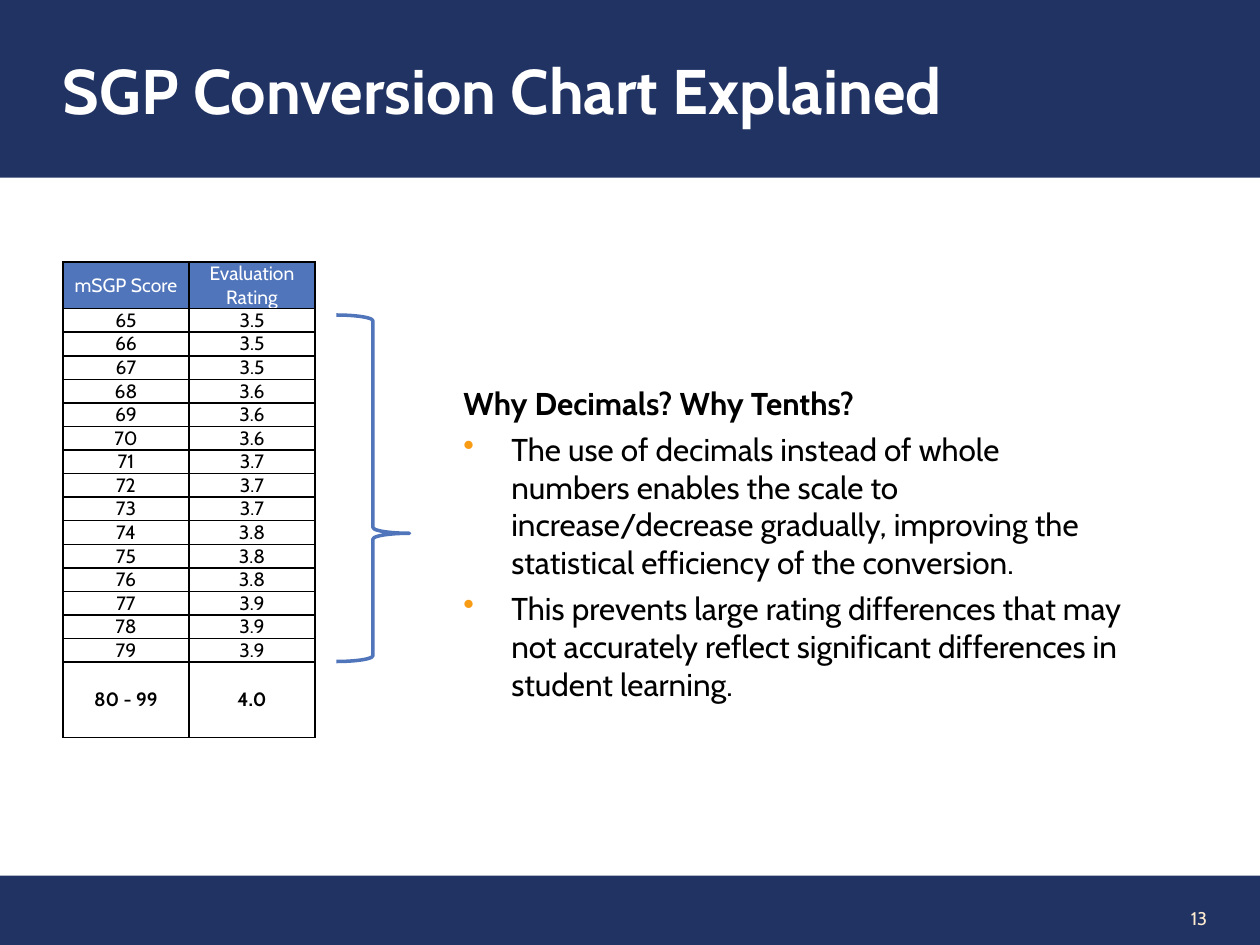
from lxml import etree
from pptx import Presentation
from pptx.dml.color import RGBColor
from pptx.enum.shapes import MSO_SHAPE
from pptx.enum.text import MSO_ANCHOR, PP_ALIGN
from pptx.oxml.ns import qn
from pptx.util import Inches, Pt

RECTANGLE, RIGHT_BRACE = MSO_SHAPE.RECTANGLE, MSO_SHAPE.RIGHT_BRACE
TOP, MIDDLE = MSO_ANCHOR.TOP, MSO_ANCHOR.MIDDLE
LEFT, CENTER, RIGHT = PP_ALIGN.LEFT, PP_ALIGN.CENTER, PP_ALIGN.RIGHT

NAVY = RGBColor(0x21, 0x33, 0x63)
BLUE = RGBColor(0x50, 0x75, 0xBB)
ORANGE = RGBColor(0xF8, 0x9C, 0x15)
CREAM = RGBColor(0xFE, 0xEB, 0xD0)
WHITE = RGBColor(0xFF, 0xFF, 0xFF)
BLACK = RGBColor(0, 0, 0)

COLUMNS, ROWS = 10, 7.5
FIRST_SCORE, LAST_SCORE = 65, 79
SCORES = range(FIRST_SCORE, LAST_SCORE + 1)
RATINGS = [
    ("mSGP Score", "Evaluation Rating"),
    *((str(score), f"{3.5 + (score - FIRST_SCORE) // 3 / 10:.1f}") for score in SCORES),
    ("80 - 99", "4.0"),
]
ROW_HEIGHTS = [0.37] + [2.81 / len(SCORES)] * len(SCORES) + [0.6]
REASONS = [
    "The use of decimals instead of whole numbers enables the scale to "
    "increase/decrease gradually, improving the statistical efficiency of the conversion.",
    "This prevents large rating differences that may not accurately reflect "
    "significant differences in student learning.",
]


class SlideBuilder:
    """Draws styled elements on a slide divided into one-inch columns and rows."""

    font = "Cabin"

    def __init__(self, slide):
        self.slide = slide

    def place(self, *lengths):
        return [Inches(length) for length in lengths]

    def style_text(self, paragraph, size, color, bold=False, align=LEFT):
        paragraph.alignment = align
        for run in paragraph.runs:
            run.font.name = self.font
            run.font.size = Pt(size)
            run.font.bold = bold
            run.font.color.rgb = color

    def band(self, top, height):
        band = self.slide.shapes.add_shape(RECTANGLE, *self.place(0, top, COLUMNS, height))
        band.shadow.inherit = False
        band.fill.solid()
        band.fill.fore_color.rgb = NAVY
        band.line.fill.background()
        return band

    def title_band(self, title, height):
        frame = self.band(0, height).text_frame
        frame.text = title
        frame.word_wrap = True
        frame.vertical_anchor = MIDDLE
        frame.margin_left = Inches(0.5)
        self.style_text(frame.paragraphs[0], 36, WHITE, bold=True)

    def text_box(self, area, lines, size, color, bold=False, align=LEFT, anchor=TOP):
        frame = self.slide.shapes.add_textbox(*self.place(*area)).text_frame
        frame.word_wrap = True
        frame.vertical_anchor = anchor
        frame.text = "\n".join(lines)
        self.style_text(frame.paragraphs[0], size, color, bold, align)
        return frame

    def bullet(self, paragraph, size):
        properties = paragraph._p.get_or_add_pPr()
        indent = Inches(0.38)
        properties.set("marL", str(indent))
        properties.set("indent", str(-indent))
        bullet_color = etree.SubElement(properties, qn("a:buClr"))
        etree.SubElement(bullet_color, qn("a:srgbClr"), val=str(ORANGE))
        etree.SubElement(properties, qn("a:buChar"), char="•")
        paragraph.space_before = Pt(4.5)
        self.style_text(paragraph, size, BLACK)

    def explanation(self, area, heading, reasons):
        frame = self.text_box(area, [heading, *reasons], 18, BLACK, bold=True)
        for paragraph in frame.paragraphs[1:]:
            self.bullet(paragraph, 18)

    def border(self, cell):
        properties = cell._tc.get_or_add_tcPr()
        for side in ("a:lnL", "a:lnR", "a:lnT", "a:lnB"):
            line = etree.SubElement(properties, qn(side), w=str(Pt(1)))
            fill = etree.SubElement(line, qn("a:solidFill"))
            etree.SubElement(fill, qn("a:srgbClr"), val=str(BLACK))

    def cell(self, cell, text, header, bold):
        cell.text = text
        cell.vertical_anchor = MIDDLE
        cell.margin_left = cell.margin_right = Inches(0.07)
        cell.margin_top = cell.margin_bottom = 0
        self.border(cell)
        if header:
            cell.fill.solid()
            cell.fill.fore_color.rgb = BLUE
        else:
            cell.fill.background()
        color = WHITE if header else BLACK
        self.style_text(cell.text_frame.paragraphs[0], 11, color, bold, CENTER)

    def table(self, left, top, width, rows, heights):
        area = self.place(left, top, width, sum(heights))
        table = self.slide.shapes.add_table(len(rows), len(rows[0]), *area).table
        table.horz_banding = False
        last = len(rows) - 1
        for index, (values, height) in enumerate(zip(rows, heights)):
            table.rows[index].height = Inches(height)
            for column, value in enumerate(values):
                self.cell(table.cell(index, column), value, index == 0, index == last)

    def brace(self, area, curve, point):
        brace = self.slide.shapes.add_shape(RIGHT_BRACE, *self.place(*area))
        brace.shadow.inherit = False
        brace.adjustments[0] = curve
        brace.adjustments[1] = point
        brace.fill.background()
        brace.line.color.rgb = BLUE
        brace.line.width = Pt(2)


def main():
    presentation = Presentation()
    presentation.slide_width = Inches(COLUMNS)
    presentation.slide_height = Inches(ROWS)
    builder = SlideBuilder(presentation.slides.add_slide(presentation.slide_layouts[6]))

    footer_top = 6.95
    builder.band(footer_top, ROWS - footer_top)
    builder.text_box((8.22, 7.09, 1.46, 0.4), ["13"], 10.5, CREAM, align=RIGHT, anchor=MIDDLE)
    builder.title_band("SGP Conversion Chart Explained", 1.41)
    builder.table(0.5, 2.08, 2, RATINGS, ROW_HEIGHTS)
    builder.brace((2.67, 2.5, 0.58, 2.75), 0.08, 0.63)
    builder.explanation((3.58, 3, 5.42, 2.89), "Why Decimals? Why Tenths?", REASONS)

    presentation.save("out.pptx")


if __name__ == "__main__":
    main()
